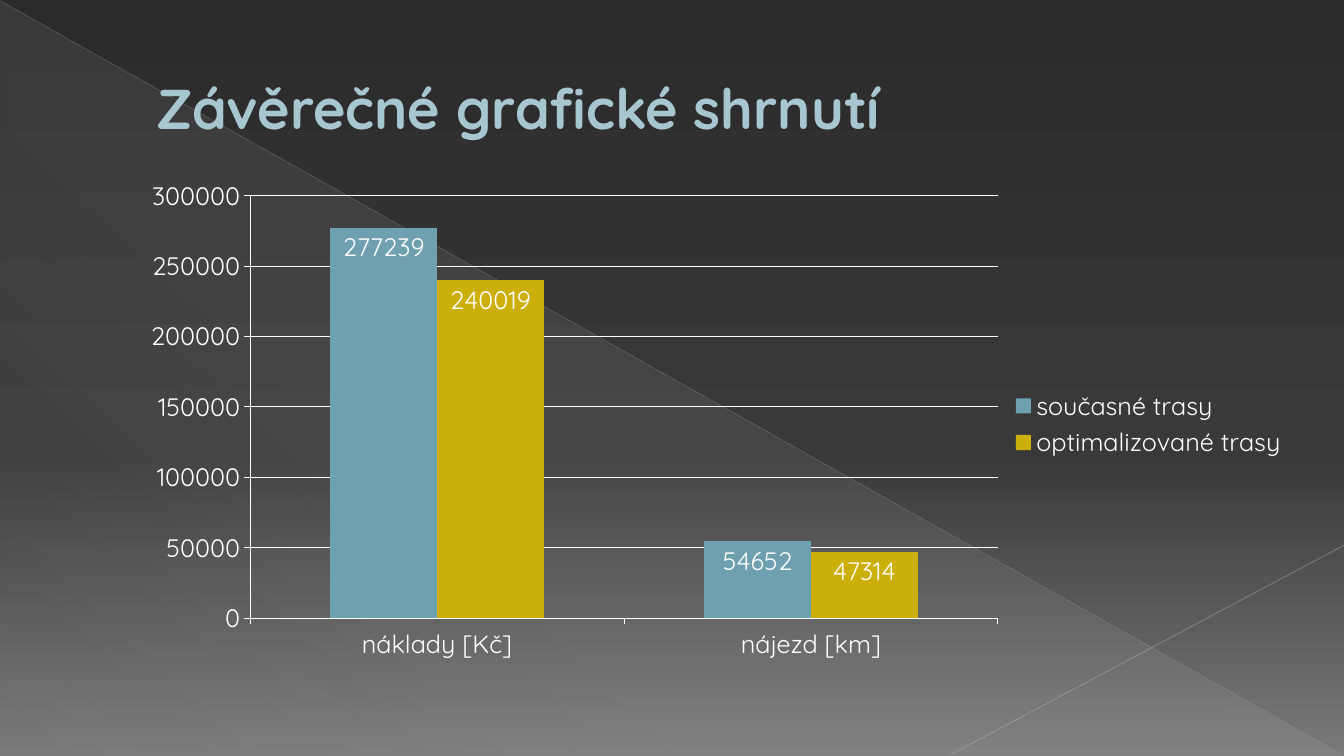
"""Build the closing chart slide comparing current and optimised routes."""
from dataclasses import dataclass

from lxml import etree
from pptx import Presentation
from pptx.chart.data import CategoryChartData
from pptx.dml.color import RGBColor
from pptx.enum.chart import XL_CHART_TYPE as ChartType
from pptx.enum.chart import XL_LABEL_POSITION as LabelPosition
from pptx.enum.chart import XL_LEGEND_POSITION as LegendPosition
from pptx.enum.chart import XL_TICK_MARK as TickMark
from pptx.enum.shapes import MSO_CONNECTOR as Connector
from pptx.enum.shapes import MSO_SHAPE as Shape
from pptx.enum.text import MSO_ANCHOR as Anchor
from pptx.oxml.ns import qn
from pptx.util import Cm, Pt

TITLE = "Závěrečné grafické shrnutí"
CATEGORIES = ["náklady [Kč]", "nájezd [km]"]
ROUTES = [
    ("současné trasy", (277239, 54652), "6EA0B0"),
    ("optimalizované trasy", (240019, 47314), "CCAF0A"),
]
AXIS_TOP, AXIS_STEP = 300000, 50000

SLIDE_SIZE = (33.87, 19.05)
TRIANGLE_BOX = (0.02, 0.04, 33.82, 19)
TITLE_BOX = (2.34, 1.02, 29.21, 3.35)
TITLE_INDENT = 1.35
CHART_BOX = (2.29, 4.01, 30.4, 13.36)
PLOT_LAYOUT = {"x": 0.132, "y": 0.069, "w": 0.62, "h": 0.797}
DIAGONALS = [
    ((0, 0.02, 33.83, 19.02), "B7B7B7", 0.39, 35),
    ((33.87, 13.74, 23.95, 19.02), "BFBFBF", 0.47, 45),
]


@dataclass(frozen=True)
class Theme:
    """Colours, font and type sizes of the slide."""
    font: str = "Quicksand"
    title_size: float = 40
    chart_size: float = 18
    grid_width: float = 0.75
    title: str = "A8C6D0"
    title_edge: str = "4C6F7A"
    title_edge_width: float = 0.5
    chart: str = "FFFFFF"
    backdrop: tuple = ((0, "2B2B2B", 100), (60, "393939", 100), (100, "797979", 100))
    triangle: tuple = ((0, "D4D2D0", 10), (70, "D4D2D0", 8), (100, "D4D2D0", 1))


THEME = Theme()


def lengths(values):
    """Turn centimetre numbers into lengths."""
    return [Cm(value) for value in values]


def add_node(parent, tag, **attributes):
    """Append a namespaced child element."""
    return etree.SubElement(parent, qn(tag), {key: str(value) for key, value in attributes.items()})


def set_opacity(color, percent):
    """Give a colour element an opacity."""
    add_node(color, "a:alpha", val=percent * 1000)


def fill_gradient(fill, holder, stops, angle):
    """Fill the holder element with a linear gradient."""
    fill.solid()
    solid = next(holder.iter(qn("a:solidFill")))
    gradient = etree.Element(qn("a:gradFill"), rotWithShape="1")
    stop_list = add_node(gradient, "a:gsLst")
    for position, color, opacity in stops:
        stop = add_node(stop_list, "a:gs", pos=position * 1000)
        set_opacity(add_node(stop, "a:srgbClr", val=color), opacity)
    add_node(gradient, "a:lin", ang=angle * 60000, scaled=0)
    solid.getparent().replace(solid, gradient)


def style_font(font, size, color, bold=False):
    """Apply the theme typeface with a size and colour."""
    font.name, font.size, font.bold = THEME.font, Pt(size), bold
    font.color.rgb = RGBColor.from_string(color)


def style_line(line, color, width):
    """Set a solid line."""
    line.color.rgb = RGBColor.from_string(color)
    line.width = Pt(width)


def add_backdrop(page):
    """Draw the gradient, the triangle and the diagonals."""
    background = page.background
    fill_gradient(background.fill, page.element, THEME.backdrop, 90)
    triangle = page.shapes.add_shape(Shape.RIGHT_TRIANGLE, *lengths(TRIANGLE_BOX))
    triangle.shadow.inherit = False
    triangle.line.fill.background()
    fill_gradient(triangle.fill, triangle.element.spPr, THEME.triangle, 133)
    for ends, color, width, opacity in DIAGONALS:
        diagonal = page.shapes.add_connector(Connector.STRAIGHT, *lengths(ends))
        style_line(diagonal.line, color, width)
        properties = diagonal.element.spPr
        set_opacity(next(properties.iter(qn("a:srgbClr"))), opacity)
        add_node(properties, "a:effectLst")


def add_title(page):
    """Write the outlined title."""
    box = page.shapes.add_textbox(*lengths(TITLE_BOX))
    frame = box.text_frame
    frame.word_wrap = True
    frame.vertical_anchor = Anchor.MIDDLE
    para = frame.paragraphs[0]
    para._p.get_or_add_pPr().set("marL", str(Cm(TITLE_INDENT)))
    span = para.add_run()
    span.text = TITLE
    style_font(para.font, THEME.title_size, THEME.title, bold=True)
    edge = add_node(span._r.get_or_add_rPr(), "a:ln", w=Pt(THEME.title_edge_width))
    add_node(add_node(edge, "a:solidFill"), "a:srgbClr", val=THEME.title_edge)


def place_plot(chart):
    """Fix the inner plot area inside the chart."""
    plot_area = chart._chartSpace.chart.plotArea
    for old in plot_area.findall(qn("c:layout")):
        plot_area.remove(old)
    layout = etree.Element(qn("c:layout"))
    manual = add_node(layout, "c:manualLayout")
    add_node(manual, "c:layoutTarget", val="inner")
    for side in "xy":
        add_node(manual, f"c:{side}Mode", val="edge")
    for side, share in PLOT_LAYOUT.items():
        add_node(manual, f"c:{side}", val=share)
    plot_area.insert(0, layout)


def add_route_chart(page):
    """Draw the clustered columns."""
    data = CategoryChartData()
    data.categories = CATEGORIES
    for name, values, _ in ROUTES:
        data.add_series(name, values)
    chart = page.shapes.add_chart(ChartType.COLUMN_CLUSTERED, *lengths(CHART_BOX), data).chart
    style_font(chart.font, THEME.chart_size, THEME.chart)
    chart.has_title = False
    chart.has_legend = True
    chart.legend.position = LegendPosition.RIGHT
    chart.legend.include_in_layout = False
    value_axis = chart.value_axis
    value_axis.minimum_scale, value_axis.maximum_scale = 0, AXIS_TOP
    value_axis.major_unit = AXIS_STEP
    value_axis.has_major_gridlines = True
    style_line(value_axis.major_gridlines.format.line, THEME.chart, THEME.grid_width)
    for axis in (value_axis, chart.category_axis):
        axis.major_tick_mark = TickMark.OUTSIDE
        style_line(axis.format.line, THEME.chart, THEME.grid_width)
    plot = chart.plots[0]
    plot.gap_width, plot.overlap = 150, 0
    plot.vary_by_categories = False
    for series, (_, _, color) in zip(plot.series, ROUTES):
        series.format.fill.solid()
        series.format.fill.fore_color.rgb = RGBColor.from_string(color)
        labels = series.data_labels
        labels.show_value = True
        labels.position = LabelPosition.INSIDE_END
        style_font(labels.font, THEME.chart_size, THEME.chart)
    place_plot(chart)


def main():
    """Assemble and save the deck."""
    deck = Presentation()
    deck.slide_width, deck.slide_height = lengths(SLIDE_SIZE)
    page = deck.slides.add_slide(deck.slide_layouts[6])
    add_backdrop(page)
    add_title(page)
    add_route_chart(page)
    deck.save("out.pptx")


if __name__ == "__main__":
    main()
